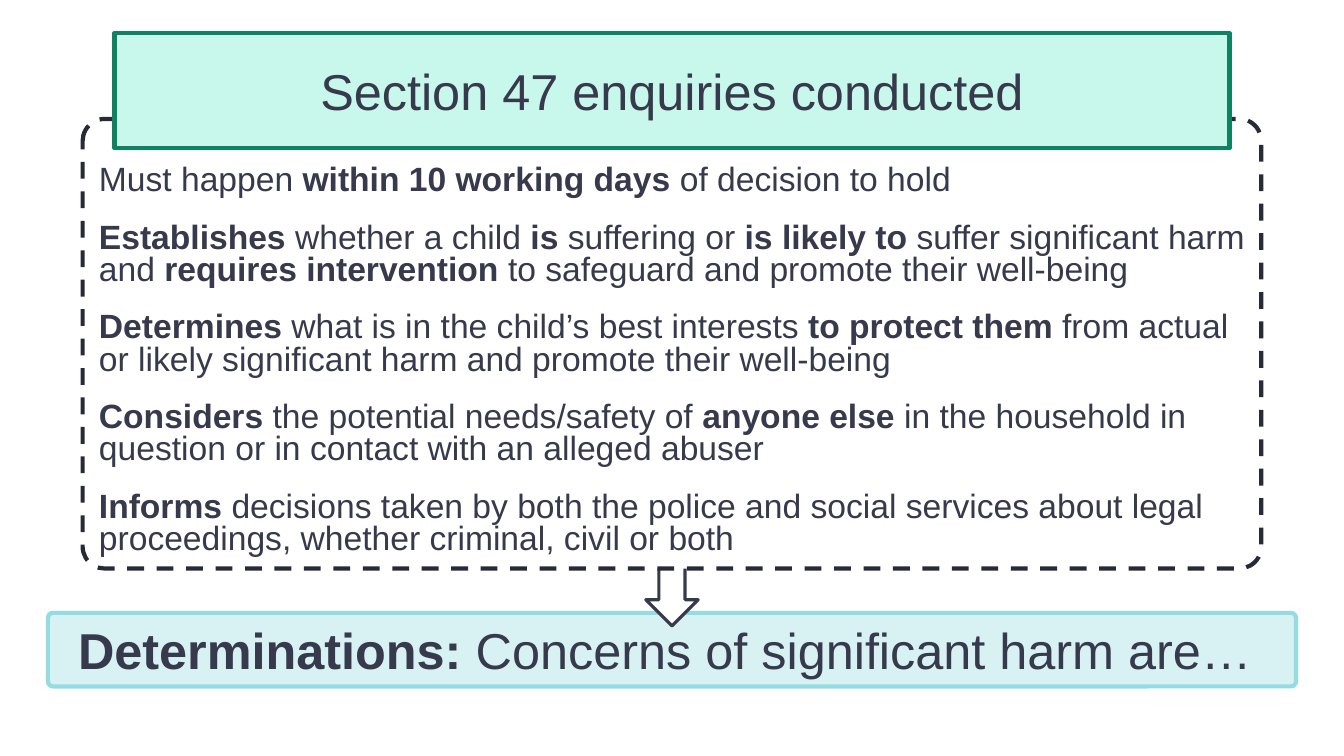
from dataclasses import dataclass
from typing import Optional

from lxml.etree import SubElement
from pptx import Presentation
from pptx.dml.color import RGBColor
from pptx.enum.dml import MSO_LINE as Dash
from pptx.enum.shapes import MSO_SHAPE as Kind
from pptx.enum.text import MSO_ANCHOR as Anchor, MSO_AUTO_SIZE as Fit, PP_ALIGN as Align
from pptx.oxml.ns import qn
from pptx.util import Inches, Pt

WIDE, HIGH = Inches(13.33), Inches(7.5)
FONT = "Arial"
INK = RGBColor(0x37, 0x39, 0x4C)
DARK = RGBColor(0x29, 0x2A, 0x38)
WHITE = RGBColor(0xFF, 0xFF, 0xFF)
MINT = RGBColor(0xC7, 0xF8, 0xEB)
GREEN = RGBColor(0x10, 0x82, 0x64)
PALE = RGBColor(0xD8, 0xF2, 0xF4)
AQUA = RGBColor(0x95, 0xDB, 0xE2)


@dataclass(frozen=True)
class Panel:
    """A centred block; top, width and height are percent of the slide."""
    top: float
    width: float
    height: float
    fill: RGBColor
    edge: RGBColor
    kind: Kind = Kind.ROUNDED_RECTANGLE
    line: float = 3
    bend: Optional[float] = None


TITLE = Panel(4.4, 82.97, 15.2, MINT, GREEN)
DUTIES = Panel(15.73, 87.7, 59.47, WHITE, DARK, bend=0.049)
RESULT = Panel(81.07, 92.87, 9.73, PALE, AQUA, bend=0.068)
ARROW = Panel(73.33, 3.9, 9.47, WHITE, INK, Kind.DOWN_ARROW, 2.25)

# Words between bars are bold.
POINTS = [
    "Must happen |within 10 working days |of decision to hold",
    "|Establishes| whether a child |is |suffering or |is likely to |suffer significant "
    "harm and |requires intervention| to safeguard and promote their well-being",
    "|Determines| what is in the child’s best interests |to protect them |from actual "
    "or likely significant harm and promote their well-being",
    "|Considers| the potential needs/safety of |anyone else |in the household in "
    "question or in contact with an alleged abuser",
    "|Informs| decisions taken by both the police and social services about legal "
    "proceedings, whether criminal, civil or both",
]


def place(panel: Panel) -> tuple[int, int, int, int]:
    share = panel.width / 100
    return (int(WIDE * (1 - share) / 2), int(HIGH * panel.top / 100),
            int(WIDE * share), int(HIGH * panel.height / 100))


def paint(shape, panel: Panel) -> None:
    shape.fill.solid()
    shape.fill.fore_color.rgb = panel.fill
    shape.line.color.rgb = panel.edge
    shape.line.width = Pt(panel.line)


def draw(slide, panel: Panel):
    shape = slide.shapes.add_shape(panel.kind, *place(panel))
    shape.shadow.inherit = False
    if panel.bend is not None:
        shape.adjustments[0] = panel.bend
    paint(shape, panel)
    return shape


def write(shape, lines: list[str], size: int, align: Align, anchor: Anchor,
          fit: Fit = Fit.NONE) -> None:
    frame = shape.text_frame
    frame.word_wrap = True
    frame.auto_size = fit
    frame.vertical_anchor = anchor
    for row, line in enumerate(lines):
        para = frame.add_paragraph() if row else frame.paragraphs[0]
        para.alignment = align
        for part, words in enumerate(line.split("|")):
            if words:
                run = para.add_run()
                run.text = words
                run.font.name = FONT
                run.font.size = Pt(size)
                run.font.bold = part % 2 == 1
                run.font.color.rgb = INK


def head(slide) -> None:
    """Turn the title placeholder into a rounded panel in front of the rest."""
    title = slide.shapes.title
    title.left, title.top, title.width, title.height = place(TITLE)
    shape = SubElement(title.element.spPr, qn("a:prstGeom"), prst="roundRect")
    SubElement(shape, qn("a:avLst"))
    paint(title, TITLE)
    write(title, ["Section 47 enquiries conducted"], 36, Align.CENTER, Anchor.MIDDLE)
    title.element.getparent().append(title.element)


def main() -> None:
    deck = Presentation()
    deck.slide_width, deck.slide_height = WIDE, HIGH
    slide = deck.slides.add_slide(deck.slide_layouts.get_by_name("Title Only"))

    result = draw(slide, RESULT)
    write(result, ["|Determinations:| Concerns of significant harm are… "],
          36, Align.CENTER, Anchor.TOP, Fit.SHAPE_TO_FIT_TEXT)
    draw(slide, ARROW)

    duties = draw(slide, DUTIES)
    duties.line.dash_style = Dash.DASH
    write(duties, POINTS, 24, Align.LEFT, Anchor.BOTTOM)
    for para in duties.text_frame.paragraphs:
        para.line_spacing = 0.8
        para.space_after = Pt(18)

    head(slide)
    deck.save("out.pptx")


if __name__ == "__main__":
    main()
